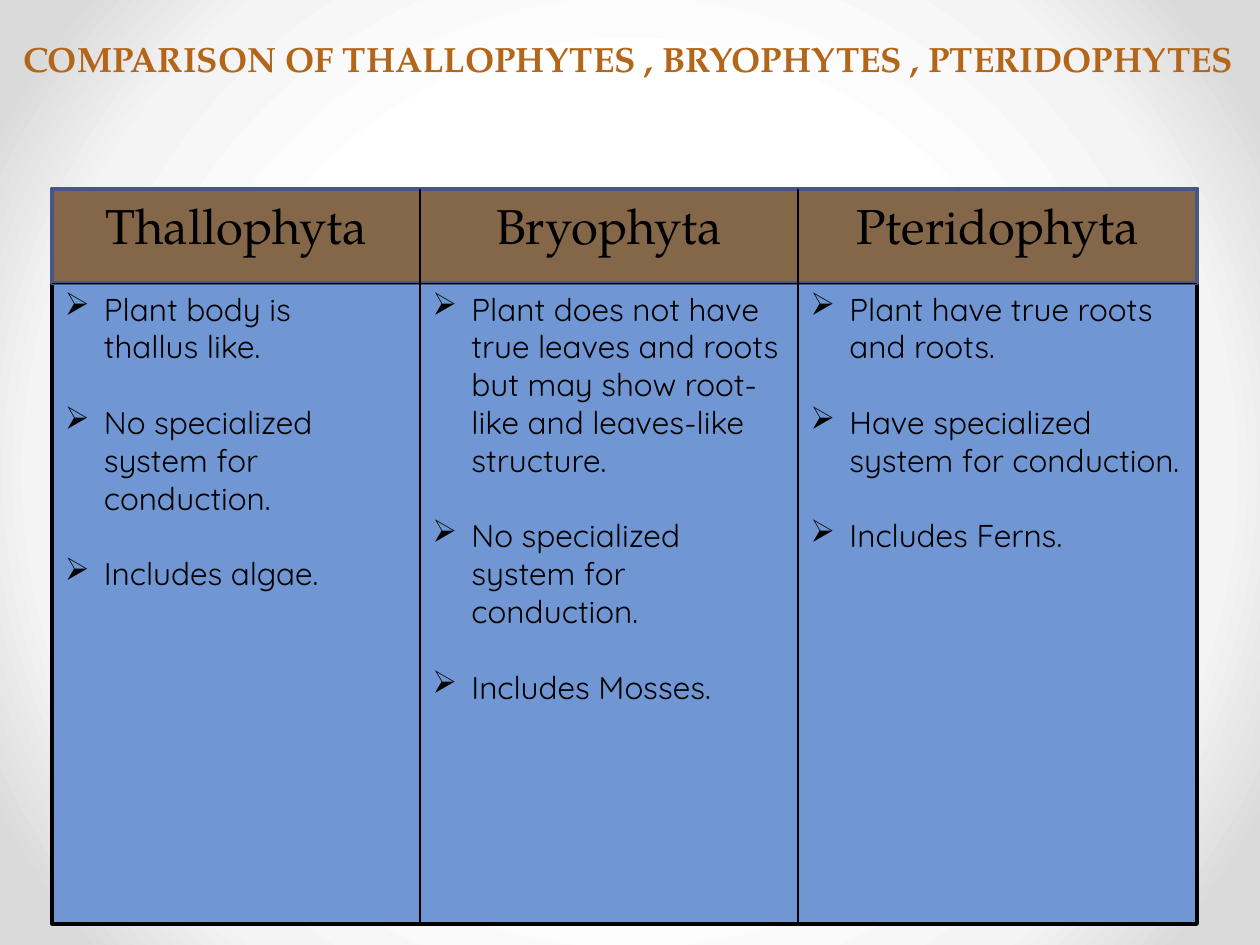
from dataclasses import dataclass
from itertools import accumulate

from pptx import Presentation
from pptx.dml.color import RGBColor
from pptx.enum.shapes import MSO_CONNECTOR, MSO_SHAPE
from pptx.enum.text import MSO_ANCHOR, PP_ALIGN
from pptx.oxml import parse_xml
from pptx.oxml.ns import nsdecls, qn
from pptx.util import Inches, Pt

COLORS = {
    "body": "7097D3",
    "header": "846648",
    "header_edge": "475785",
    "ink": "000000",
    "title": "B36619",
}
BACKDROP = {50: "FFFFFF", 76: "F4F4F4", 92: "DADADA"}

# Formats for the three kinds of text
TITLE = {"name": "TeX Gyre Pagella", "size": Pt(20), "bold": True}
HEADING = {"name": "TeX Gyre Pagella", "size": Pt(28)}
POINT = {"name": "Quicksand", "size": Pt(18)}

# Grid of twelve units to the inch
SLIDE_COLS, SLIDE_ROWS = 120, 90
LEFT, TOP = 5, 18
HEADER_ROWS, BODY_ROWS = 9, 61


@dataclass
class Division:
    name: str
    cols: int
    points: tuple[str, ...]


DIVISIONS = [
    Division("Thallophyta", 35, (
        "Plant body is\nthallus like.",
        "No specialized system for conduction.",
        "Includes algae.",
    )),
    Division("Bryophyta", 36, (
        "Plant does not have true leaves and roots but may show root-like "
        "and leaves-like structure.",
        "No specialized system for conduction.",
        "Includes Mosses.",
    )),
    Division("Pteridophyta", 38, (
        "Plant have true roots and roots.",
        "Have specialized system for conduction.",
        "Includes Ferns.",
    )),
]


def grid(*units: float) -> list[int]:
    return [Inches(unit / 12) for unit in units]


def color(key: str) -> RGBColor:
    return RGBColor.from_string(COLORS[key])


def style(paragraph, formats: dict, ink: str = "ink") -> None:
    for run in paragraph.runs:
        for attribute, value in formats.items():
            setattr(run.font, attribute, value)
        run.font.color.rgb = color(ink)


def paint_background(slide) -> None:
    slide.background.fill.gradient()
    gradient = slide.element.find(".//" + qn("a:gradFill"))
    stops = "".join(
        f'<a:gs pos="{share * 1000}"><a:srgbClr val="{tone}"/></a:gs>'
        for share, tone in BACKDROP.items()
    )
    radial = parse_xml(
        f'<a:gradFill {nsdecls("a")} rotWithShape="1"><a:gsLst>{stops}</a:gsLst>'
        '<a:path path="circle"><a:fillToRect l="50000" t="50000" r="50000" b="50000"/>'
        "</a:path></a:gradFill>"
    )
    gradient.getparent().replace(gradient, radial)


def add_panel(slide, cols: int, rows: int, fill: str, edge: str) -> None:
    panel = slide.shapes.add_shape(MSO_SHAPE.RECTANGLE, *grid(LEFT, TOP, cols, rows))
    panel.shadow.inherit = False
    panel.fill.solid()
    panel.fill.fore_color.rgb = color(fill)
    panel.line.color.rgb = color(edge)
    panel.line.width = Pt(2.25)


def add_rule(slide, x1: int, y1: int, x2: int, y2: int) -> None:
    rule = slide.shapes.add_connector(MSO_CONNECTOR.STRAIGHT, *grid(x1, y1, x2, y2))
    rule.line.color.rgb = color("ink")
    rule.line.width = Pt(0.75)
    rule._element.spPr.append(parse_xml(f'<a:effectLst {nsdecls("a")}/>'))


def add_text(slide, x: int, y: int, cols: int, rows: int):
    frame = slide.shapes.add_textbox(*grid(x, y, cols, rows)).text_frame
    frame.word_wrap = True
    return frame


def add_heading(slide, x: int, division: Division) -> None:
    heading = add_text(slide, x, TOP, division.cols, HEADER_ROWS).paragraphs[0]
    heading.text = division.name
    heading.alignment = PP_ALIGN.CENTER
    style(heading, HEADING)


def add_points(slide, x: int, division: Division) -> None:
    frame = add_text(slide, x, TOP + HEADER_ROWS, division.cols, BODY_ROWS)
    for index, point in enumerate(division.points):
        paragraph = frame.add_paragraph() if index else frame.paragraphs[0]
        paragraph.text = point
        paragraph.space_before = Pt(21.6 if index else 0)
        style(paragraph, POINT)
        properties = paragraph._p.get_or_add_pPr()
        properties.set("marL", str(Inches(0.31)))
        properties.set("indent", str(-Inches(0.31)))
        properties.append(parse_xml(f'<a:buChar {nsdecls("a")} char="➢"/>'))


def set_title(slide, text: str) -> None:
    title = slide.shapes.title
    box = {"left": 0.06, "top": 0.25, "width": 9.86, "height": 1.04}
    for attribute, inches in box.items():
        setattr(title, attribute, Inches(inches))
    frame = title.text_frame
    frame.text = text
    frame.word_wrap = False
    frame.vertical_anchor = MSO_ANCHOR.TOP
    frame.paragraphs[0].alignment = PP_ALIGN.CENTER
    style(frame.paragraphs[0], TITLE, "title")


def main() -> None:
    deck = Presentation()
    deck.slide_width, deck.slide_height = grid(SLIDE_COLS, SLIDE_ROWS)
    slide = deck.slides.add_slide(deck.slide_layouts[5])
    paint_background(slide)
    set_title(slide, "COMPARISON OF THALLOPHYTES , BRYOPHYTES , PTERIDOPHYTES")

    # Coloured panels of the comparison
    edges = list(accumulate((d.cols for d in DIVISIONS), initial=LEFT))
    width, bottom = edges[-1] - LEFT, TOP + HEADER_ROWS + BODY_ROWS
    add_panel(slide, width, bottom - TOP, "body", "ink")
    add_panel(slide, width, HEADER_ROWS, "header", "header_edge")

    # Lines under the header and between the divisions
    add_rule(slide, LEFT, TOP + HEADER_ROWS, edges[-1], TOP + HEADER_ROWS)
    for x in edges[1:-1]:
        add_rule(slide, x, TOP, x, bottom)

    # Heading and points of each division
    for x, division in zip(edges, DIVISIONS):
        add_heading(slide, x, division)
        add_points(slide, x, division)

    deck.save("out.pptx")


if __name__ == "__main__":
    main()
